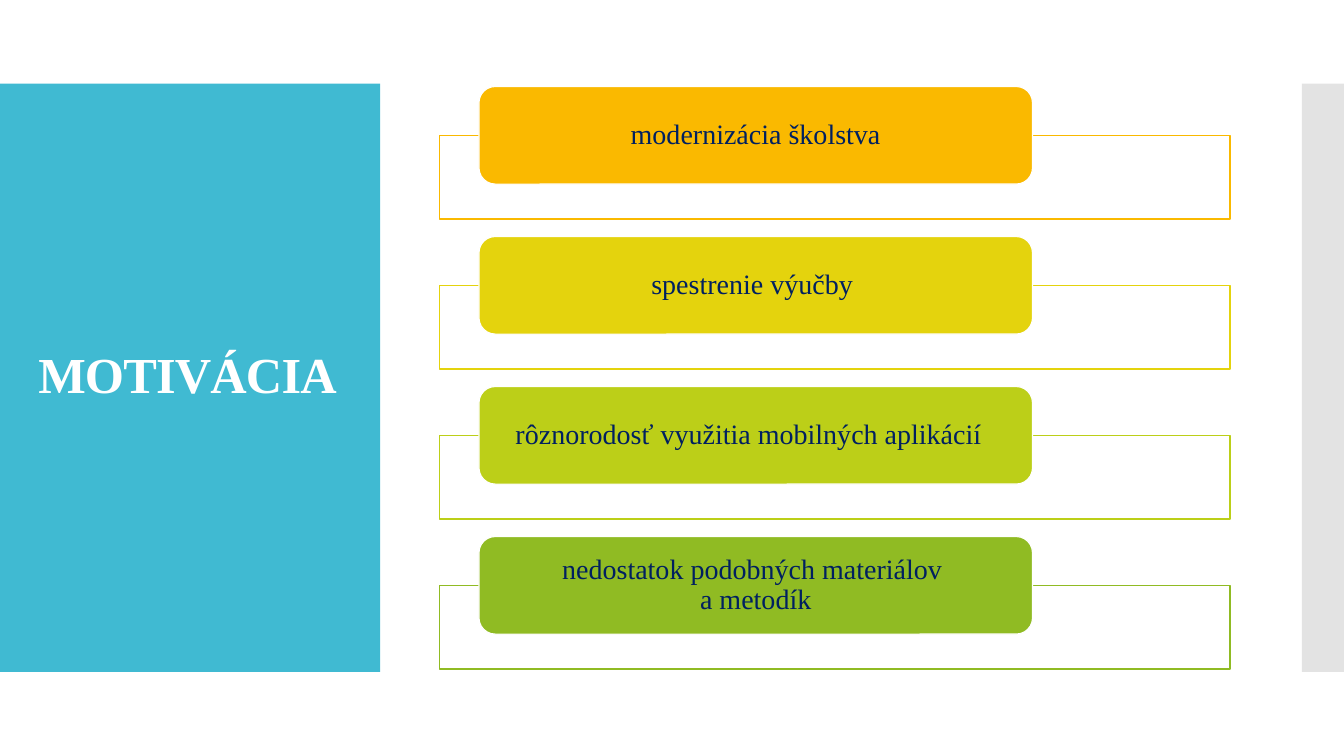
from lxml import etree
from pptx import Presentation
from pptx.dml.color import RGBColor
from pptx.enum.shapes import MSO_SHAPE
from pptx.enum.text import MSO_ANCHOR, MSO_AUTO_SIZE, PP_ALIGN
from pptx.oxml.ns import qn
from pptx.util import Cm, Pt

RECTANGLE, ROUNDED = MSO_SHAPE.RECTANGLE, MSO_SHAPE.ROUNDED_RECTANGLE
MIDDLE, NO_AUTOFIT = MSO_ANCHOR.MIDDLE, MSO_AUTO_SIZE.NONE
LEFT, CENTER = PP_ALIGN.LEFT, PP_ALIGN.CENTER
FONT = "Times New Roman"
TITLE_ONLY = 5

COLORS = {
    "panel": "40BAD2", "strip": "C8C8C8", "white": "FFFFFF", "text": "002060",
    "orange": "FAB900", "yellow": "E4D30D", "lime": "BCCF18", "green": "90BB23",
}
# Text, colour and extra right inset in cm
MOTIVES = [
    ("modernizácia školstva", "orange", 0),
    ("spestrenie výučby", "yellow", 0.18),
    ("rôznorodosť využitia mobilných aplikácií", "lime", 0.36),
    ("nedostatok podobných materiálov \na metodík", "green", 0),
]


def color(name):
    return RGBColor.from_string(COLORS[name])


def add_block(slide, kind, box, fill, line=None, opacity=100):
    shape = slide.shapes.add_shape(kind, *(Cm(length) for length in box))
    shape.shadow.inherit = False
    shape.fill.solid()
    shape.fill.fore_color.rgb = color(fill)
    if opacity < 100:
        fill_color = shape.element.spPr.find(qn("a:solidFill"))[0]
        etree.SubElement(fill_color, qn("a:alpha"), val=str(opacity * 1000))
    if line:
        shape.line.color.rgb = color(line)
        shape.line.width = Pt(0.85)
    else:
        shape.line.fill.background()
    return shape


def format_text(shape, text, alignment, size, font_color, bold=False):
    frame = shape.text_frame
    frame.word_wrap = True
    frame.auto_size = NO_AUTOFIT
    frame.vertical_anchor = MIDDLE
    paragraph = frame.paragraphs[0]
    paragraph.text = text
    paragraph.alignment = alignment
    paragraph.line_spacing = 0.9
    paragraph.space_before = Pt(0)
    font = paragraph.font
    font.name, font.size, font.bold = FONT, Pt(size), bold
    font.color.rgb = color(font_color)
    return frame


def add_title_panel(slide, box, text):
    left, top, width, height = box
    add_block(slide, RECTANGLE, box, "panel")
    title = slide.shapes.title
    title.left, title.top = Cm(left + 0.71), Cm(top + 1.01)
    title.width, title.height = Cm(width - 1.4), Cm(height - 2.04)
    frame = format_text(title, text, LEFT, 36, "white", bold=True)
    frame.margin_right = 0
    frame.paragraphs[0].runs[0].font._element.set("spc", "-60")
    # Bring the title in front of its panel
    title.element.getparent().append(title.element)


def add_motive_list(slide, box, motives):
    left, top, width, height = box
    frame_height, tab_height, tab_rise = 2.11, 2.46, 1.23
    pitch = (height - tab_rise - frame_height) / (len(motives) - 1)
    for index, (text, accent, nudge) in enumerate(motives):
        tab_top = top + index * pitch
        add_block(slide, RECTANGLE, (left, tab_top + tab_rise, width, frame_height),
                  "white", accent, opacity=90)
        tab = add_block(slide, ROUNDED,
                        (left + 1, tab_top, width * 0.7, tab_height), accent, "white")
        frame = format_text(tab, text, CENTER, 20, "text")
        frame.margin_left, frame.margin_right = Cm(0.53), Cm(0.53 + nudge)
        frame.margin_top = frame.margin_bottom = 0


def main():
    presentation = Presentation()
    presentation.slide_width, presentation.slide_height = Cm(33.87), Cm(19.05)
    slide = presentation.slides.add_slide(presentation.slide_layouts[TITLE_ONLY])
    add_title_panel(slide, (0, 2.11, 9.58, 14.82), "MOTIVÁCIA")
    # Right edge strip
    add_block(slide, RECTANGLE, (32.81, 2.11, 1.06, 14.82), "strip", opacity=50)
    add_motive_list(slide, (11.07, 2.18, 19.93, 14.68), MOTIVES)
    presentation.save("out.pptx")


if __name__ == "__main__":
    main()
